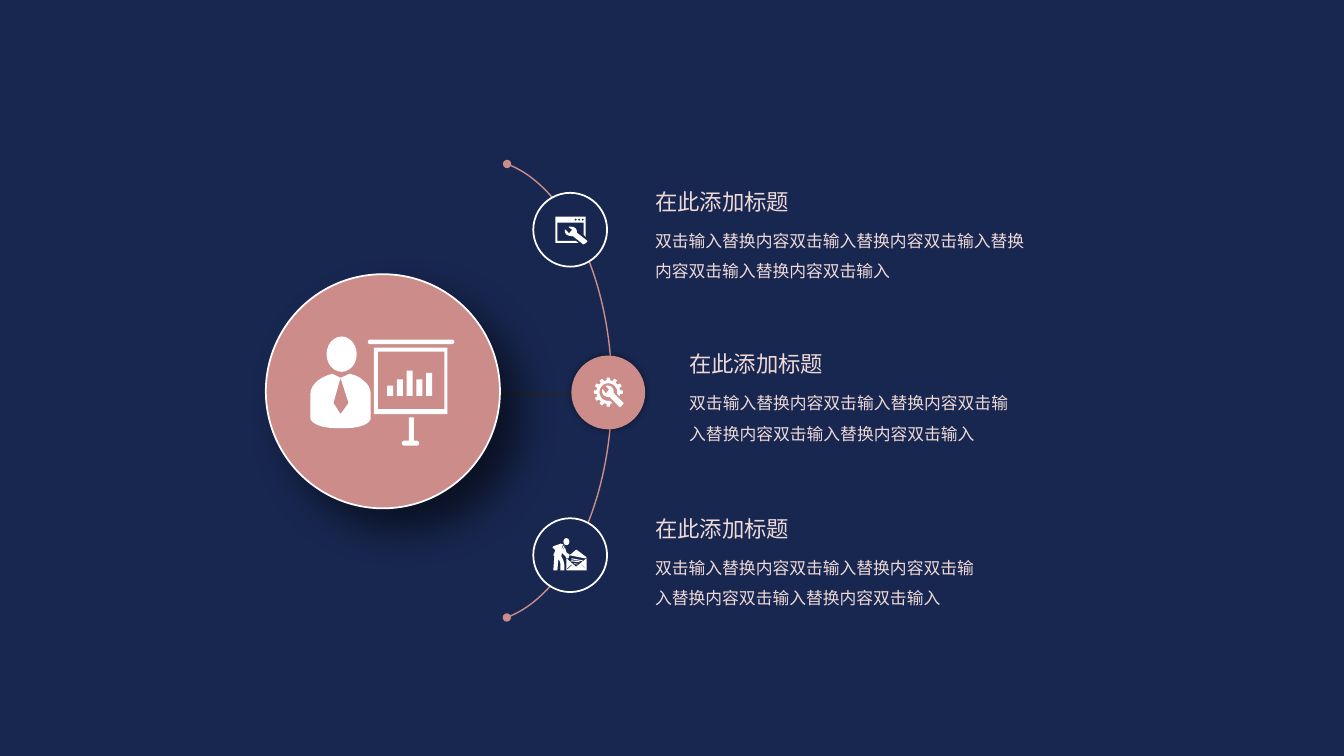
from math import cos, radians, sin

from lxml import etree
from pptx import Presentation
from pptx.dml.color import RGBColor
from pptx.enum.shapes import MSO_CONNECTOR, MSO_SHAPE
from pptx.enum.text import MSO_AUTO_SIZE
from pptx.oxml.ns import qn
from pptx.util import Cm, Pt

OVAL = MSO_SHAPE.OVAL
ARC = MSO_SHAPE.ARC
RECT = MSO_SHAPE.RECTANGLE
ROUND = MSO_SHAPE.ROUNDED_RECTANGLE
STRAIGHT = MSO_CONNECTOR.STRAIGHT
GROW = MSO_AUTO_SIZE.SHAPE_TO_FIT_TEXT

FONT = "Noto Sans CJK SC"
HUE = {"navy": "182750", "rose": "CC8D8A", "pale": "EED9D8",
       "white": "FFFFFF", "dark": "262626", "black": "000000"}
UNIT = 0.0254

TITLE = "在此添加标题"
BODY = "双击输入替换内容" * 4 + "双击输入"
ITEMS = [(16.26, 4.62, 10.13), (17.12, 8.71, 8.56), (16.26, 12.85, 8.79)]
NODES = [(13.44, "navy", "white"), (14.4, "rose", None), (13.44, "navy", "white")]
BARS = [0.26, 0.42, 0.64, 0.42, 0.58]

BUST = [(53, 7), (49, 3, 44, 1, 39, 0), (30, 4), (38, 29), (30, 40), (23, 29),
        (30, 4), (22, 0), (14, 2, 0, 8, 0, 21), (0, 44), (0, 44, 1, 54, 28, 54),
        (33, 54), (60, 54, 60, 44, 60, 44), (60, 21), (60, 14, 57, 10, 53, 7)]
STAND = [(12, 23), (12, 0), (7, 0), (7, 23), (3, 23), (1, 23, 0, 24, 0, 25.5),
         (0, 27, 1, 28, 3, 28), (14, 28), (16, 28, 17, 27, 17, 25.5),
         (17, 24, 16, 23, 14, 23)]
WRENCH = [(22, 18), (21, 17), (12, 8), (12, 6, 12, 4, 10, 2), (9, 1, 6, 0, 4, 1),
          (7, 4), (8, 5, 8, 5, 7, 5), (5, 8), (4, 8), (1, 4), (0, 6, 1, 9, 2, 10),
          (4, 12, 6, 12, 8, 12), (17, 21), (17, 21, 17, 22, 18, 22),
          (20, 21, 21, 20, 22, 18)]
FRAME = [(20, 24), (2, 24), (2, 6), (28, 6), (28, 18), (30, 20), (30, 0),
         (0, 0), (0, 26), (23, 26)]
CLERK = [(1, 8), (4, 7), (7, 6), (8, 5.5), (11, 6), (10, 8), (8, 13), (11, 8),
         (12, 7), (12, 8), (10, 13), (12, 10), (12.5, 9), (14, 14), (15, 15),
         (17, 16), (17, 17), (23, 12), (24, 11.5), (34, 19), (33, 20), (32, 20),
         (17, 17), (16, 20), (14, 20), (13, 18), (11, 16), (10, 15), (9.5, 14.5),
         (9, 18), (11, 22), (12, 27), (12, 32), (8, 32), (8, 25), (7, 22), (6, 21),
         (5, 32), (1, 32), (2, 18), (1, 17), (3, 12), (1, 10), (0, 10)]
MAIL = [[(24, 28), (34, 20), (34, 32), (14, 32), (14, 20), (23, 28)],
        [(28.5, 26.2), (33, 31), (33, 30.3), (29, 26)],
        [(19, 26), (14.3, 30.5), (15, 31), (19.3, 27)],
        [(19, 20), (30, 22), (30, 23), (19, 21)],
        [(18.5, 22), (27, 23), (27, 24), (18.5, 23)],
        [(21.5, 25), (25, 25.4), (25, 26), (21.5, 25.8)]]


def color(name):
    return RGBColor.from_string(HUE[name])


def paint(shape, fill, line=None, width=1.25):
    shape.shadow.inherit = False
    if fill:
        shape.fill.solid()
        shape.fill.fore_color.rgb = color(fill)
    else:
        shape.fill.background()
    if line:
        shape.line.color.rgb = color(line)
        shape.line.width = Pt(width)
    else:
        shape.line.fill.background()
    return shape


def add_form(shapes, kind, left, top, width, height, fill="white", line=None, thick=1.25):
    shape = shapes.add_shape(kind, Cm(left), Cm(top), Cm(width), Cm(height))
    return paint(shape, fill, line, thick)


def add_glow(shape, alpha, blur, dist, angle):
    effects = shape.element.spPr.find(qn("a:effectLst"))
    glow = etree.SubElement(effects, qn("a:outerShdw"), blurRad=str(Pt(blur)),
                            dist=str(Pt(dist)), dir=str(angle * 60000),
                            algn="ctr", rotWithShape="0")
    tint = etree.SubElement(glow, qn("a:srgbClr"), val=HUE["black"])
    etree.SubElement(tint, qn("a:alpha"), val=str(alpha * 1000))


def trace(steps):
    points = [steps[0]]
    for step in steps[1:]:
        if len(step) == 2:
            points.append(step)
            continue
        start, a, b, end = points[-1], step[:2], step[2:4], step[4:]
        for n in range(1, 9):
            t = n / 8
            s = 1 - t
            points.append(tuple(
                s**3 * p + 3 * s * s * t * q + 3 * s * t * t * r + t**3 * e
                for p, q, r, e in zip(start, a, b, end)))
    return points


def add_icon(shapes, left, top, loops, wide=1, tall=1):
    pen = None
    for loop in loops:
        spots = [(Cm(left + x * UNIT * wide), Cm(top + y * UNIT * tall))
                 for x, y in trace(loop)]
        if pen is None:
            pen = shapes.build_freeform(*spots[0])
        else:
            pen.move_to(*spots[0])
        pen.add_line_segments(spots[1:], close=True)
    paint(pen.convert_to_shape(), "white")


def polar(radius, angle):
    turn = radians(angle)
    return radius * cos(turn), radius * sin(turn)


def ring(x, y, radius):
    spots = [polar(radius, angle) for angle in range(0, 360, 30)]
    return [(x + a, y + b) for a, b in spots]


def box(left, top, right, low):
    return [(left, top), (right, top), (right, low), (left, low)]


def gear():
    teeth = [polar(radius, angle + turn) for angle in range(90, 361, 30)
             for radius, turn in ((11.8, -9), (14.5, -6), (14.5, 6), (11.8, 9))]
    hole = [polar(8.8, angle) for angle in range(370, 79, -10)]
    return [polar(11.8, 70)] + teeth + [polar(11.8, 380)] + hole


def add_text(shapes, text, left, top, width, height, size, space=None):
    frame = shapes.add_textbox(Cm(left), Cm(top), Cm(width), Cm(height)).text_frame
    frame.word_wrap = True
    frame.auto_size = GROW
    frame.text = text
    para = frame.paragraphs[0]
    if space:
        para.line_spacing = space
    font = para.runs[0].font
    font.size = Pt(size)
    font.name = FONT
    font.color.rgb = color("pale")
    etree.SubElement(para.runs[0].font._element, qn("a:ea"), typeface=FONT)


def add_hub(shapes):
    line = shapes.add_connector(STRAIGHT, Cm(12.45), Cm(9.93), Cm(15.39), Cm(9.93))
    line.line.color.rgb = color("dark")
    line.line.width = Pt(1)
    etree.SubElement(line.element.spPr, qn("a:effectLst"))
    disc = add_form(shapes, OVAL, 6.7, 6.91, 5.9, 5.9, "rose", "white")
    add_glow(disc, 55, 28, 21, 45)
    arc = add_form(shapes, ARC, 8.66, 3.99, 6.76, 11.71, None, "rose", 1)
    arc.adjustments[0] = 166.43
    arc.adjustments[1] = 49.61
    stroke = arc.element.spPr.find(qn("a:ln"))
    for end in ("a:headEnd", "a:tailEnd"):
        etree.SubElement(stroke, qn(end), type="oval")


def add_nodes(shapes):
    for row, (left, fill, line) in enumerate(NODES):
        node = add_form(shapes, OVAL, left, 4.86 + 4.1 * row, 1.86, 1.86, fill, line)
        if not line:
            add_glow(node, 40, 5, 0, 0)


def add_talk(shapes):
    rail = add_form(shapes, ROUND, 9.27, 8.56, 2.18, 0.11)
    rail.adjustments[0] = 0.5
    for col, height in enumerate(BARS):
        add_form(shapes, RECT, 9.76 + 0.245 * col, 9.98 - height, 0.15, height)
    add_icon(shapes, 10.13, 10.52, [STAND])
    add_icon(shapes, 9.42, 8.76, [box(0, 0, 73, 66), box(4, 4, 70, 61)])
    add_icon(shapes, 7.82, 9.42, [BUST])
    add_form(shapes, OVAL, 8.23, 8.48, 0.76, 0.89)


def add_tools(shapes):
    add_icon(shapes, 15.33, 9.88, [gear()])
    add_icon(shapes, 15.16, 9.7, [WRENCH])
    dots = [ring(x, 3, 1) for x in (20, 23.5, 27)]
    add_icon(shapes, 14, 5.46, [FRAME] + dots)
    add_icon(shapes, 14.22, 5.7, [WRENCH], 1.05, 0.82)


def add_post(shapes):
    add_form(shapes, OVAL, 14.2, 13.56, 0.15, 0.18)
    add_icon(shapes, 13.92, 13.56, [CLERK])
    add_icon(shapes, 13.92, 13.56, MAIL)


def main():
    deck = Presentation()
    deck.slide_width, deck.slide_height = Cm(33.87), Cm(19.05)
    slide = deck.slides.add_slide(deck.slide_layouts[6])
    slide.background.fill.solid()
    slide.background.fill.fore_color.rgb = color("navy")
    shapes = slide.shapes
    add_hub(shapes)
    add_nodes(shapes)
    for left, top, width in ITEMS:
        add_text(shapes, BODY, left, top + 0.82, width, 1.73, 12, 1.5)
        add_text(shapes, TITLE, left, top, 7.95, 0.94, 16)
    add_talk(shapes)
    add_tools(shapes)
    add_post(shapes)
    deck.save("out.pptx")


if __name__ == "__main__":
    main()
